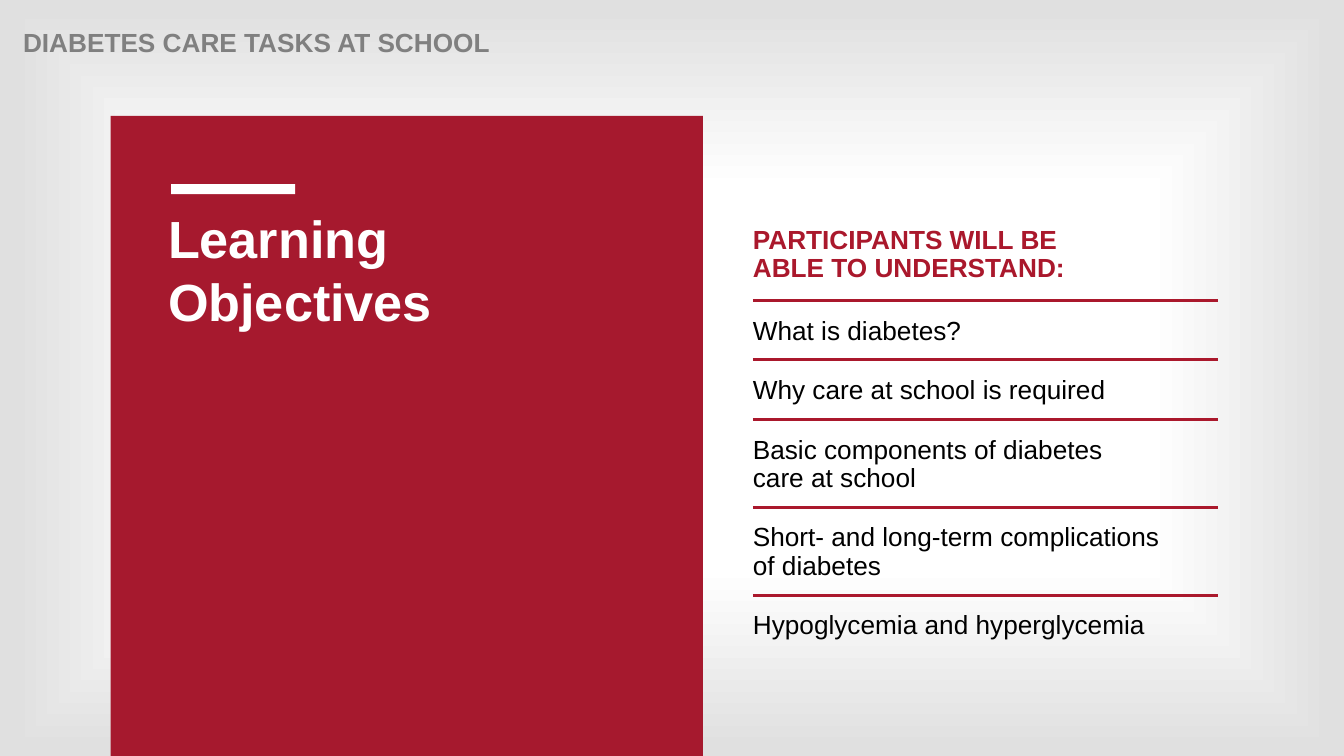
from dataclasses import dataclass

from lxml import etree
from pptx import Presentation
from pptx import util as u
from pptx.dml.color import RGBColor
from pptx.enum import shapes, text
from pptx.oxml import parse_xml
from pptx.oxml.ns import nsdecls, qn

HEADER = "DIABETES CARE TASKS AT SCHOOL"
TITLE = "Learning Objectives"
LEAD = ["PARTICIPANTS WILL BE", "ABLE TO UNDERSTAND:"]
OBJECTIVES = [
    ["What is diabetes?"],
    ["Why care at school is required"],
    ["Basic components of diabetes", "care at school"],
    ["Short- and long-term complications", "of diabetes"],
    ["Hypoglycemia and hyperglycemia"],
]


@dataclass(frozen=True)
class Theme:
    font: str = "Arial"
    panel: str = "A6192E"
    accent: str = "AA182C"
    white: str = "FFFFFF"
    grey: str = "808080"
    black: str = "000000"
    edge: str = "E0E0E0"
    body_size: float = 18.7
    title_size: float = 37.3
    rule_width: float = 2


THEME = Theme()
COLUMN_LEFT, COLUMN_WIDTH = 537.8, 332
FIRST_RULE, LINE_HEIGHT, ITEM_GAP = 214.6, 20.3, 22.2


def paint_background(page):
    fill = page.background.fill
    fill.gradient()
    gradient = page.element.find(".//" + qn("a:gradFill"))
    stops = [(12, THEME.white), (50, THEME.white), (98, THEME.edge)]
    stop_xml = "".join(
        f'<a:gs pos="{place * 1000}"><a:srgbClr val="{color}"/></a:gs>'
        for place, color in stops
    )
    radial = parse_xml(
        f'<a:gradFill {nsdecls("a")} rotWithShape="1"><a:gsLst>{stop_xml}</a:gsLst>'
        '<a:path path="shape"><a:fillToRect l="50000" t="50000" r="50000" b="50000"/>'
        "</a:path></a:gradFill>"
    )
    gradient.getparent().replace(gradient, radial)


def add_block(page, left, top, width, height, color):
    block = page.shapes.add_shape(
        shapes.MSO_SHAPE.RECTANGLE, u.Pt(left), u.Pt(top), u.Pt(width), u.Pt(height)
    )
    block.shadow.inherit = False
    block.fill.solid()
    block.fill.fore_color.rgb = RGBColor.from_string(color)
    block.line.fill.background()


def add_text(page, frame, paragraphs, size, color, bold=True, inset=0, spacing=0.9, gap=0):
    box = page.shapes.add_textbox(*(u.Pt(length) for length in frame))
    body = box.text_frame
    body.word_wrap = True
    body.vertical_anchor = text.MSO_ANCHOR.TOP
    body.margin_left = body.margin_right = u.Pt(inset)
    body.margin_top = body.margin_bottom = u.Pt(inset / 2)
    for index, lines in enumerate(paragraphs):
        para = body.add_paragraph() if index else body.paragraphs[0]
        para.line_spacing = spacing
        para.space_before = u.Pt(gap if index else 0)
        for number, line in enumerate(lines):
            if number:
                para.add_line_break()
            span = para.add_run()
            span.text = line
            span.font.name = THEME.font
            span.font.size = u.Pt(size)
            span.font.bold = bold
            span.font.color.rgb = RGBColor.from_string(color)


def add_rule(page, top):
    rule = page.shapes.add_connector(
        shapes.MSO_CONNECTOR.STRAIGHT,
        u.Pt(COLUMN_LEFT), u.Pt(top), u.Pt(COLUMN_LEFT + COLUMN_WIDTH), u.Pt(top),
    )
    rule.line.color.rgb = RGBColor.from_string(THEME.accent)
    rule.line.width = u.Pt(THEME.rule_width)
    etree.SubElement(rule.element.spPr, qn("a:effectLst"))


def main():
    deck = Presentation()
    deck.slide_width, deck.slide_height = u.Pt(960), u.Pt(540)
    page = deck.slides.add_slide(deck.slide_layouts[6])
    paint_background(page)

    add_block(page, 79, 82.8, 423, 457.2, THEME.panel)
    add_block(page, 122.3, 131.5, 88.6, 7.2, THEME.white)
    add_text(page, (9.4, 17.8, 792, 20), [[HEADER]], THEME.body_size, THEME.grey, inset=7.2)
    add_text(page, (113, 144, 350.6, 140.4), [[TITLE]], THEME.title_size, THEME.white,
             inset=7.2, spacing=1.0)
    add_text(page, (COLUMN_LEFT, 161.8, COLUMN_WIDTH, 42), [LEAD], THEME.body_size, THEME.accent)
    add_text(page, (COLUMN_LEFT, 227, COLUMN_WIDTH, 253), OBJECTIVES, THEME.body_size,
             THEME.black, bold=False, gap=ITEM_GAP)

    top = FIRST_RULE
    for lines in OBJECTIVES:
        add_rule(page, top)
        top += ITEM_GAP + LINE_HEIGHT * len(lines)

    deck.save("out.pptx")


if __name__ == "__main__":
    main()
